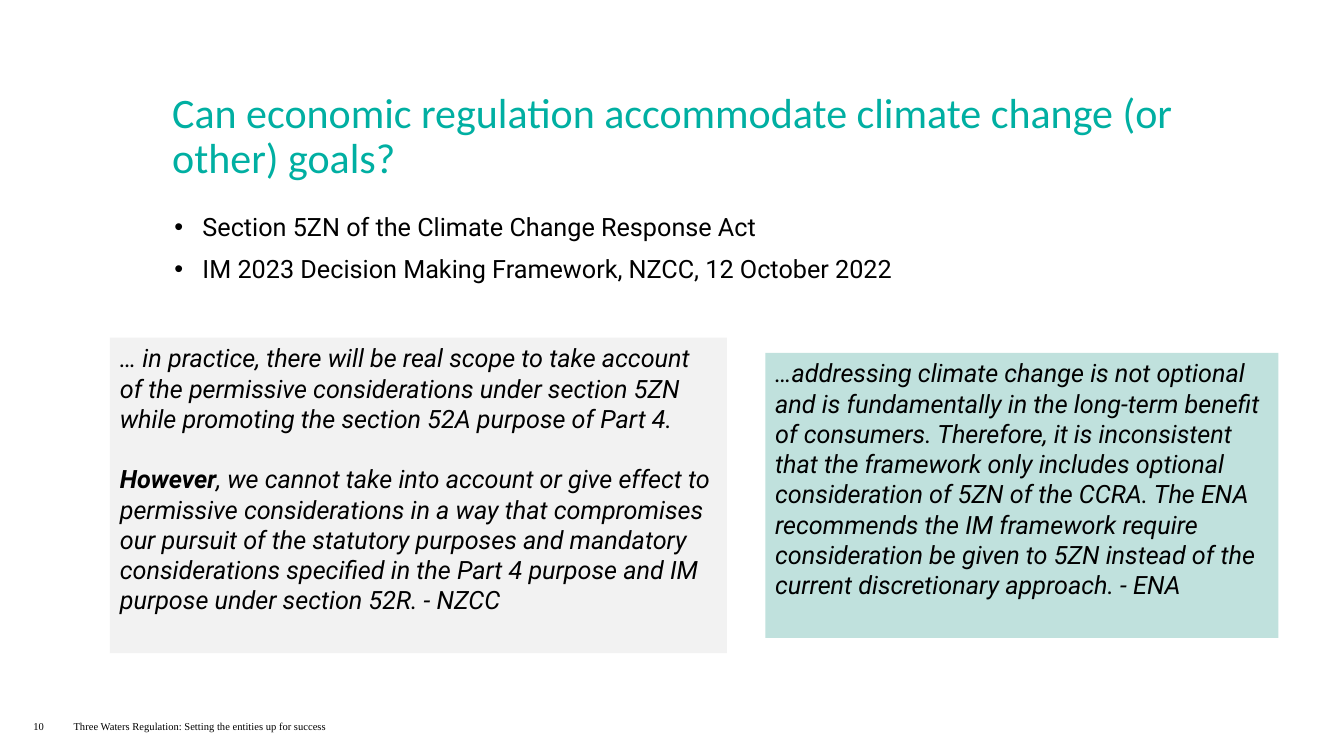
from lxml import etree
from pptx import Presentation
from pptx.dml.color import RGBColor
from pptx.enum.shapes import MSO_SHAPE
from pptx.enum.text import MSO_ANCHOR, PP_ALIGN
from pptx.oxml.ns import qn
from pptx.util import Inches, Pt

RECT = MSO_SHAPE.RECTANGLE
LEFT = PP_ALIGN.LEFT
TOP, MIDDLE = MSO_ANCHOR.TOP, MSO_ANCHOR.MIDDLE
COLORS = {"title": "00AFA2", "text": "000000", "grey": "F2F2F2", "mint": "C0E1DD"}
INSETS = (0.1, 0.05, 0.1, 0.05)
BODY_SIZE = 18
HANG = 0.28

TITLE = "Can economic regulation accommodate climate change (or other) goals?"
BULLETS = [
    "Section 5ZN of the Climate Change Response Act",
    "IM 2023 Decision Making Framework, NZCC, 12 October 2022",
]
NZCC_QUOTE = [
    [("… in practice, there will be real scope to take account of the permissive "
      "considerations under section 5ZN while promoting the section 52A purpose "
      "of Part 4.", False)],
    [("However", True),
     (", we cannot take into account or give effect to permissive considerations "
      "in a way that compromises our pursuit of the statutory purposes and "
      "mandatory considerations specified in the Part 4 purpose and IM purpose "
      "under section 52R. - NZCC", False)],
]
ENA_QUOTE = [
    [("…addressing climate change is not optional and is fundamentally in the "
      "long-term benefit of consumers. Therefore, it is inconsistent that the "
      "framework only includes optional consideration of 5ZN of the CCRA. The ENA "
      "recommends the IM framework require consideration be given to 5ZN instead "
      "of the current discretionary approach. - ENA", False)],
]


def style_font(font, name, size, color="text"):
    """Set the typeface, size and colour of a font."""
    font.name = name
    font.size = Pt(size)
    font.color.rgb = RGBColor.from_string(COLORS[color])


def set_frame(tf, anchor=TOP, insets=INSETS):
    """Set wrapping, anchor and insets of a text frame."""
    tf.word_wrap = True
    tf.vertical_anchor = anchor
    tf.margin_left, tf.margin_top, tf.margin_right, tf.margin_bottom = map(Inches, insets)


def add_text(s, box, anchor=TOP, insets=INSETS):
    """Add an empty text box and return its text frame."""
    tf = s.shapes.add_textbox(*map(Inches, box)).text_frame
    set_frame(tf, anchor, insets)
    return tf


def add_title(s, box):
    """Add the slide title."""
    p = add_text(s, box, MIDDLE).paragraphs[0]
    p.text = TITLE
    p.line_spacing = 0.9
    style_font(p.runs[0].font, "Calibri", 30, "title")


def add_bullets(s, box):
    """Add the bulleted list of sources."""
    tf = add_text(s, box, insets=(0.1, 0, 0.1, 0.05))
    tf.text = "\n".join(BULLETS)
    for p in tf.paragraphs:
        p.line_spacing = Pt(20)
        p.space_after = Pt(10)
        pPr = p._p.get_or_add_pPr()
        pPr.set("marL", str(Inches(HANG)))
        pPr.set("indent", str(-Inches(HANG)))
        etree.SubElement(pPr, qn("a:buFont")).set("typeface", "Arial")
        etree.SubElement(pPr, qn("a:buChar")).set("char", "•")
        style_font(p.runs[0].font, "Roboto", BODY_SIZE)


def add_quote(s, box, fill, paragraphs):
    """Add a filled panel holding an italic quotation."""
    sp = s.shapes.add_shape(RECT, *map(Inches, box))
    sp.shadow.inherit = False
    sp.fill.solid()
    sp.fill.fore_color.rgb = RGBColor.from_string(COLORS[fill])
    sp.line.fill.background()
    tf = sp.text_frame
    set_frame(tf)
    for i, runs in enumerate(paragraphs):
        p = tf.add_paragraph() if i else tf.paragraphs[0]
        p.alignment = LEFT
        if i:
            p.space_before = Pt(21.6)
        for text, bold in runs:
            r = p.add_run()
            r.text = text
            style_font(r.font, "Roboto", BODY_SIZE)
            r.font.italic = True
            r.font.bold = bold


def add_footer(s, box, number_width):
    """Add the page number and the presentation name side by side."""
    left, top, width, height = box
    name_left = left + number_width
    cells = [
        ("10", (left, top, 0.28, height)),
        ("Three Waters Regulation: Setting the entities up for success",
         (name_left, top, width - number_width, height)),
    ]
    for text, cell in cells:
        p = add_text(s, cell, MIDDLE, (0, 0.05, 0, 0.05)).paragraphs[0]
        p.text = text
        style_font(p.runs[0].font, "Times New Roman", 7.5)


def main():
    """Build the slide and save it."""
    prs = Presentation()
    prs.slide_width, prs.slide_height = Inches(13.33), Inches(7.5)
    s = prs.slides.add_slide(prs.slide_layouts[6])
    add_title(s, (1.61, 0.86, 10.13, 1.01))
    add_bullets(s, (1.63, 2.12, 10.11, 1.01))
    add_quote(s, (7.59, 3.5, 5.09, 2.83), "mint", ENA_QUOTE)
    add_quote(s, (1.09, 3.35, 6.12, 3.13), "grey", NZCC_QUOTE)
    add_footer(s, (0.33, 7.09, 4.9, 0.23), 0.4)
    prs.save("out.pptx")


if __name__ == "__main__":
    main()
